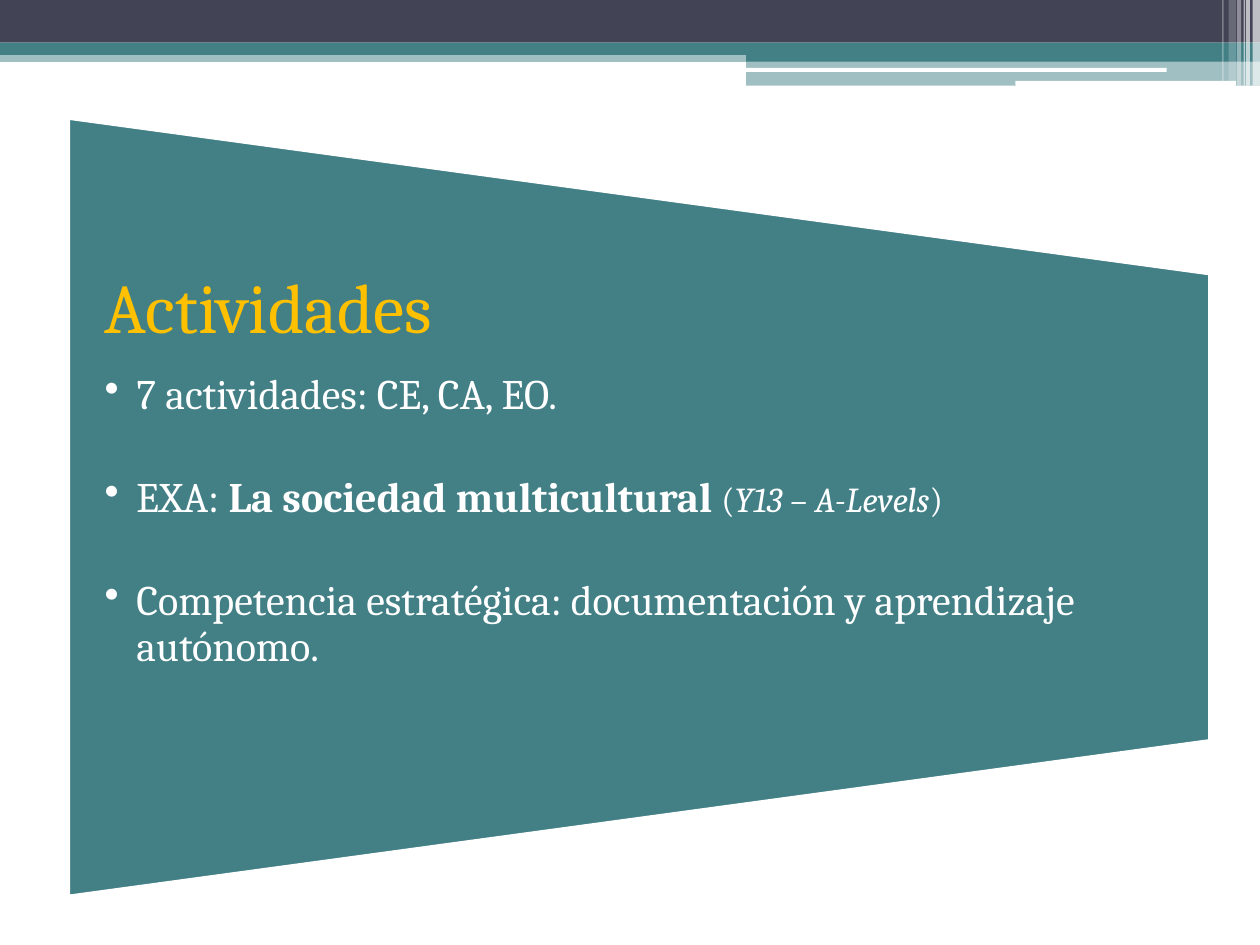
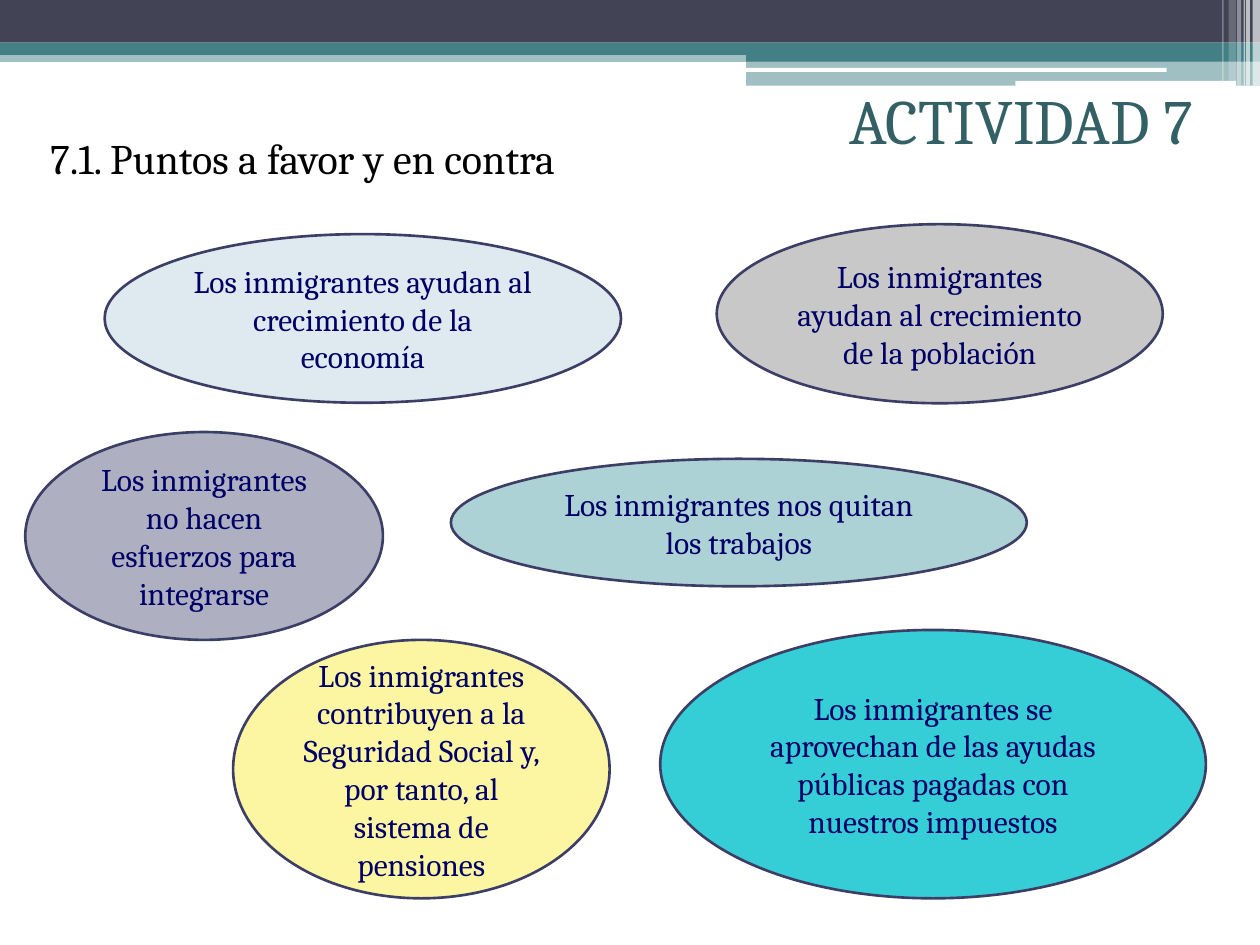
from dataclasses import dataclass

from lxml.etree import SubElement as Sub
from pptx import Presentation
from pptx.dml.color import RGBColor as RGB
from pptx.enum.shapes import MSO_SHAPE as Kind
from pptx.enum.text import MSO_ANCHOR as Anchor, PP_ALIGN as Align
from pptx.oxml.ns import qn
from pptx.util import Cm, Pt


@dataclass(frozen=True)
class Theme:
    font: str = "Cambria"
    white: str = "FFFFFF"
    black: str = "000000"
    dark: str = "424456"
    teal: str = "438086"
    deep: str = "326065"
    gold: str = "FFC000"
    navy: str = "000066"
    edge: str = "3D3E66"
    head: int = 40
    title: int = 36
    body: int = 24
    note: int = 20
    label: int = 18
    line: float = 1.5


class Deck:
    def __init__(self, theme):
        self.theme = theme
        self.prs = Presentation()
        self.prs.slide_width, self.prs.slide_height = Cm(25.4), Cm(19.05)
        self.slide = None

    def page(self):
        """Start a slide and draw the shared bands and stripes."""
        t = self.theme
        self.slide = self.prs.slides.add_slide(self.prs.slide_layouts[6])
        for box, color, alpha in (
            ((0, 1.02, 25.4, 0.23), t.teal, 50),
            ((0, 0, 25.4, 0.86), t.dark, 100),
            ((0, 0.86, 25.4, 0.25), t.teal, 100),
            ((15.04, 0.99, 10.36, 0.25), t.teal, 100),
            ((15.04, 1.22, 10.36, 0.51), t.teal, 50),
        ):
            self.shape(Kind.RECTANGLE, box, color, alpha)
        for box in (15.01, 1.37, 8.51, 0.08), (20.47, 1.63, 4.45, 0.1):
            self.shape(Kind.ROUNDED_RECTANGLE, box, t.white)
        for left, width, height, alpha in (
            (25.25, 0.15, 1.73, 65),
            (25.12, 0.08, 1.73, 65),
            (25.07, 0.03, 1.73, 60),
            (24.94, 0.08, 1.73, 40),
            (24.77, 0.15, 1.63, 20),
            (24.64, 0.03, 1.63, 30),
        ):
            self.shape(Kind.RECTANGLE, (left, 0, width, height), t.white, alpha)

    def shape(self, kind, box, color, alpha=100, line=None):
        """Add a filled shape; alpha is its opacity in percent."""
        item = self.slide.shapes.add_shape(kind, *map(Cm, box))
        item.shadow.inherit = False
        item.fill.solid()
        item.fill.fore_color.rgb = RGB.from_string(color)
        if alpha < 100:
            tint = item._element.spPr.find(".//" + qn("a:srgbClr"))
            Sub(tint, qn("a:alpha"), val=str(alpha * 1000))
        if line:
            item.line.color.rgb = RGB.from_string(line)
            item.line.width = Pt(self.theme.line)
        else:
            item.line.fill.background()
        return item

    def style(self, run, size, color, bold=False, italic=False):
        font = run.font
        font.name, font.size = self.theme.font, Pt(size)
        font.bold, font.italic = bold, italic
        font.color.rgb = RGB.from_string(color)

    def label(self, par, text, size, color, align=Align.LEFT):
        """Fill a paragraph with one styled run."""
        par.text = text
        par.alignment = align
        self.style(par.runs[0], size, color)

    def frame(self, box, anchor=Anchor.TOP):
        """Add a wrapping text box and give back its text frame."""
        frame = self.slide.shapes.add_textbox(*map(Cm, box)).text_frame
        frame.word_wrap = True
        frame.vertical_anchor = anchor
        return frame

    def text(self, box, text, size, color, align=Align.LEFT, anchor=Anchor.TOP):
        self.label(self.frame(box, anchor).paragraphs[0], text, size, color, align)

    def bullet(self, frame, parts):
        """Add a bulleted paragraph made of (text, size, bold, italic) parts."""
        par = frame.add_paragraph()
        par.line_spacing, par.space_after = 0.9, Pt(33)
        props = par._p.get_or_add_pPr()
        props.set("marL", str(Cm(0.64)))
        props.set("indent", str(-Cm(0.64)))
        Sub(props, qn("a:buChar"), char="•")
        for text, size, bold, italic in parts:
            run = par.add_run()
            run.text = text
            self.style(run, size, self.theme.white, bold, italic)

    def oval(self, box, color, text):
        t = self.theme
        item = self.shape(Kind.OVAL, box, color, line=t.edge)
        frame = item.text_frame
        frame.word_wrap = True
        frame.vertical_anchor = Anchor.MIDDLE
        self.label(frame.paragraphs[0], text, t.label, t.navy, Align.CENTER)


def plan(deck):
    """Slide with the overview of the activities."""
    t = deck.theme
    deck.page()
    panel = deck.shape(
        Kind.FLOWCHART_MANUAL_OPERATION, (5.05, -1.27, 15.67, 22.99), t.teal, line=t.white
    )
    panel.rotation = 270
    frame = deck.frame((1.4, 5.51, 22.99, 9.4))
    frame.margin_left = frame.margin_right = Cm(0.71)
    frame.margin_top = frame.margin_bottom = 0
    head = frame.paragraphs[0]
    deck.label(head, "Actividades", t.head, t.gold)
    head.line_spacing, head.space_after = 0.9, Pt(14)
    for parts in (
        [("7 actividades: CE, CA, EO.", t.body, False, False)],
        [
            ("EXA:", t.body, False, False),
            (" La sociedad multicultural ", t.body, True, False),
            ("(", t.note, False, False),
            ("Y13 – A-Levels", t.note, False, True),
            (")", t.note, False, False),
        ],
        [("Competencia estratégica: documentación y aprendizaje autónomo.",
          t.body, False, False)],
    ):
        deck.bullet(frame, parts)


def debate(deck):
    """Slide with the points for and against."""
    t = deck.theme
    deck.page()
    deck.text((0.76, 1.7, 22.86, 2.97), "7.1. Puntos a favor y en contra",
              t.body, t.black, anchor=Anchor.MIDDLE)
    for box, color, claim in (
        ((9.09, 9.25, 11.61, 2.57), "ADD2D6", "nos quitan los trabajos"),
        ((13.31, 12.7, 11, 5.41), "36CED6",
         "se aprovechan de las ayudas públicas pagadas con nuestros impuestos"),
        ((2.11, 4.72, 10.41, 3.4), "DEE9F0", "ayudan al crecimiento de la economía"),
        ((0.51, 8.71, 7.21, 4.19), "AEB0C1", "no hacen esfuerzos para integrarse"),
        ((14.45, 4.52, 8.99, 3.61), "C8C8C8", "ayudan al crecimiento de la población"),
        ((4.7, 12.9, 7.59, 5.21), "FCF6A2",
         "contribuyen a la Seguridad Social y, por tanto, al sistema de pensiones"),
    ):
        deck.oval(box, color, f"Los inmigrantes {claim}")
    deck.text((9.09, 1.52, 15.21, 1.8), "ACTIVIDAD 7", t.title, t.deep, Align.RIGHT)


def main():
    deck = Deck(Theme())
    plan(deck)
    debate(deck)
    deck.prs.save("out.pptx")


if __name__ == "__main__":
    main()
